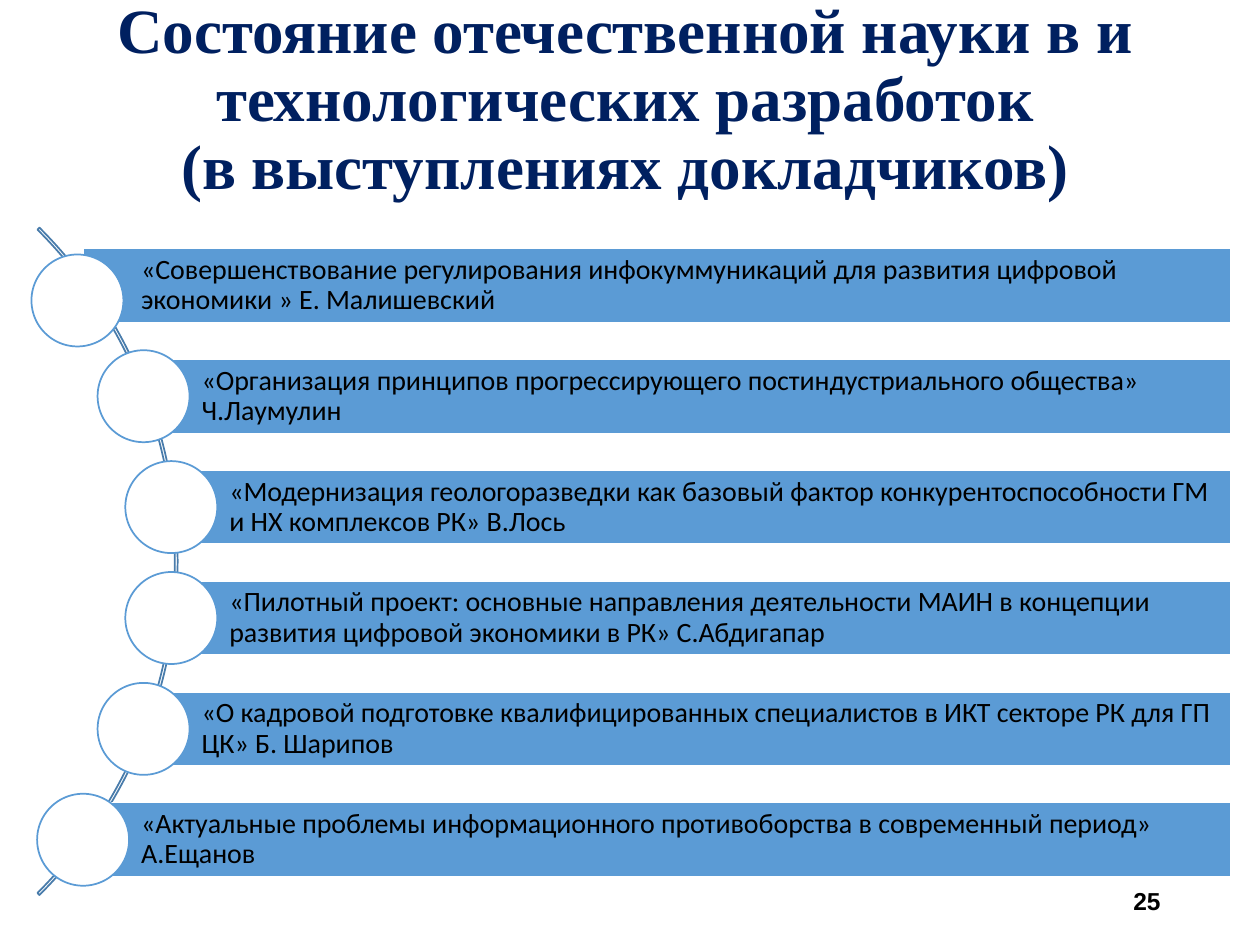
import pptx
import pptx.util
import pptx.dml.color
import pptx.enum.shapes
import pptx.enum.text

Inches = pptx.util.Inches
Pt = pptx.util.Pt
RGBColor = pptx.dml.color.RGBColor
MSO_SHAPE = pptx.enum.shapes.MSO_SHAPE
PP_ALIGN = pptx.enum.text.PP_ALIGN
MSO_ANCHOR = pptx.enum.text.MSO_ANCHOR

BLUE = RGBColor(0x5B, 0x9B, 0xD5)
ARC_BLUE = RGBColor(0x49, 0x7C, 0xAB)
NAVY = RGBColor(0x00, 0x20, 0x60)
WHITE = RGBColor(0xFF, 0xFF, 0xFF)
BLACK = RGBColor(0x00, 0x00, 0x00)

TITLE_FONT = {"name": "Times New Roman", "size": Pt(36), "bold": True}
TOPIC_FONT = {"name": "Calibri", "size": Pt(16), "bold": False}
NUMBER_FONT = {"name": "Arial", "size": Pt(14), "bold": True}
BAR_FRAME = {
    "margin_left": Inches(0.46),
    "margin_right": Inches(0.04),
    "margin_top": Inches(0.04),
    "margin_bottom": Inches(0.04),
}

TITLE = [
    "Состояние отечественной науки в и технологических разработок",
    "(в выступлениях докладчиков)",
]
TOPICS = [
    (0.66, "«Совершенствование регулирования инфокуммуникаций для развития цифровой экономики » Е. Малишевский"),
    (1.14, "«Организация принципов прогрессирующего постиндустриального общества» Ч.Лаумулин"),
    (1.36, "«Модернизация геологоразведки как базовый фактор конкурентоспособности ГМ и НХ комплексов РК» В.Лось"),
    (1.36, "«Пилотный проект: основные направления деятельности МАИН в концепции развития цифровой экономики в РК» С.Абдигапар"),
    (1.14, "«О кадровой подготовке квалифицированных специалистов в ИКТ секторе РК для ГП ЦК» Б. Шарипов"),
    (0.66, "«Актуальные проблемы информационного противоборства в современный период» А.Ещанов"),
]
BAR_TOP, BAR_STEP, BAR_HEIGHT, BAR_RIGHT = 1.97, 0.88, 0.59, 9.77
CIRCLE = 0.73
FIRST_CIRCLE = (0.25, 2.02)


def apply(target, values):
    for name, value in values.items():
        setattr(target, name, value)


class SlideBuilder:
    def __init__(self, slide):
        self.slide = slide

    def shape(self, kind, box, line, fill=None):
        sp = self.slide.shapes.add_shape(kind, *map(Inches, box))
        sp.shadow.inherit = False
        if fill is None:
            sp.fill.background()
        else:
            sp.fill.solid()
            sp.fill.fore_color.rgb = fill
        sp.line.color.rgb = line
        sp.line.width = Pt(1)
        return sp

    def fill_text(self, sp, lines, font, color, align, spacing, frame=None):
        tf = sp.text_frame
        apply(tf, {"word_wrap": True, "vertical_anchor": MSO_ANCHOR.MIDDLE})
        apply(tf, frame or {})
        for i, line in enumerate(lines):
            p = tf.add_paragraph() if i else tf.paragraphs[0]
            apply(p, {"alignment": align, "line_spacing": spacing})
            r = p.add_run()
            r.text = line
            apply(r.font, font)
            r.font.color.rgb = color

    def text(self, box, lines, font, color, align, spacing=1.0):
        sp = self.slide.shapes.add_textbox(*map(Inches, box))
        self.fill_text(sp, lines, font, color, align, spacing)

    def arc(self, box, adjustments):
        sp = self.shape(MSO_SHAPE.BLOCK_ARC, box, ARC_BLUE)
        for i, value in enumerate(adjustments):
            sp.adjustments[i] = value

    def bar(self, left, top, topic):
        box = (left, top, BAR_RIGHT - left, BAR_HEIGHT)
        sp = self.shape(MSO_SHAPE.RECTANGLE, box, WHITE, BLUE)
        self.fill_text(sp, [topic], TOPIC_FONT, BLACK, PP_ALIGN.LEFT, 0.9, BAR_FRAME)

    def circle(self, left, top):
        self.shape(MSO_SHAPE.OVAL, (left, top, CIRCLE, CIRCLE), BLUE, WHITE)


def main():
    prs = pptx.Presentation()
    prs.slide_width, prs.slide_height = Inches(10), Inches(7.5)
    s = SlideBuilder(prs.slides.add_slide(prs.slide_layouts[6]))

    s.arc((-6.08, 0.71, 7.49, 7.49), (189, 27, 0.003))
    for i, (left, topic) in enumerate(TOPICS):
        top = BAR_TOP + i * BAR_STEP
        s.bar(left, top, topic)
        circle_at = (left - CIRCLE / 2, top + (BAR_HEIGHT - CIRCLE) / 2)
        s.circle(*(circle_at if i else FIRST_CIRCLE))

    s.text((0.17, 0.29, 9.58, 1.03), TITLE, TITLE_FONT, NAVY, PP_ALIGN.CENTER, 0.9)
    s.text((7.06, 6.95, 2.25, 0.4), ["25"], NUMBER_FONT, BLACK, PP_ALIGN.RIGHT)
    prs.save("out.pptx")


if __name__ == "__main__":
    main()
